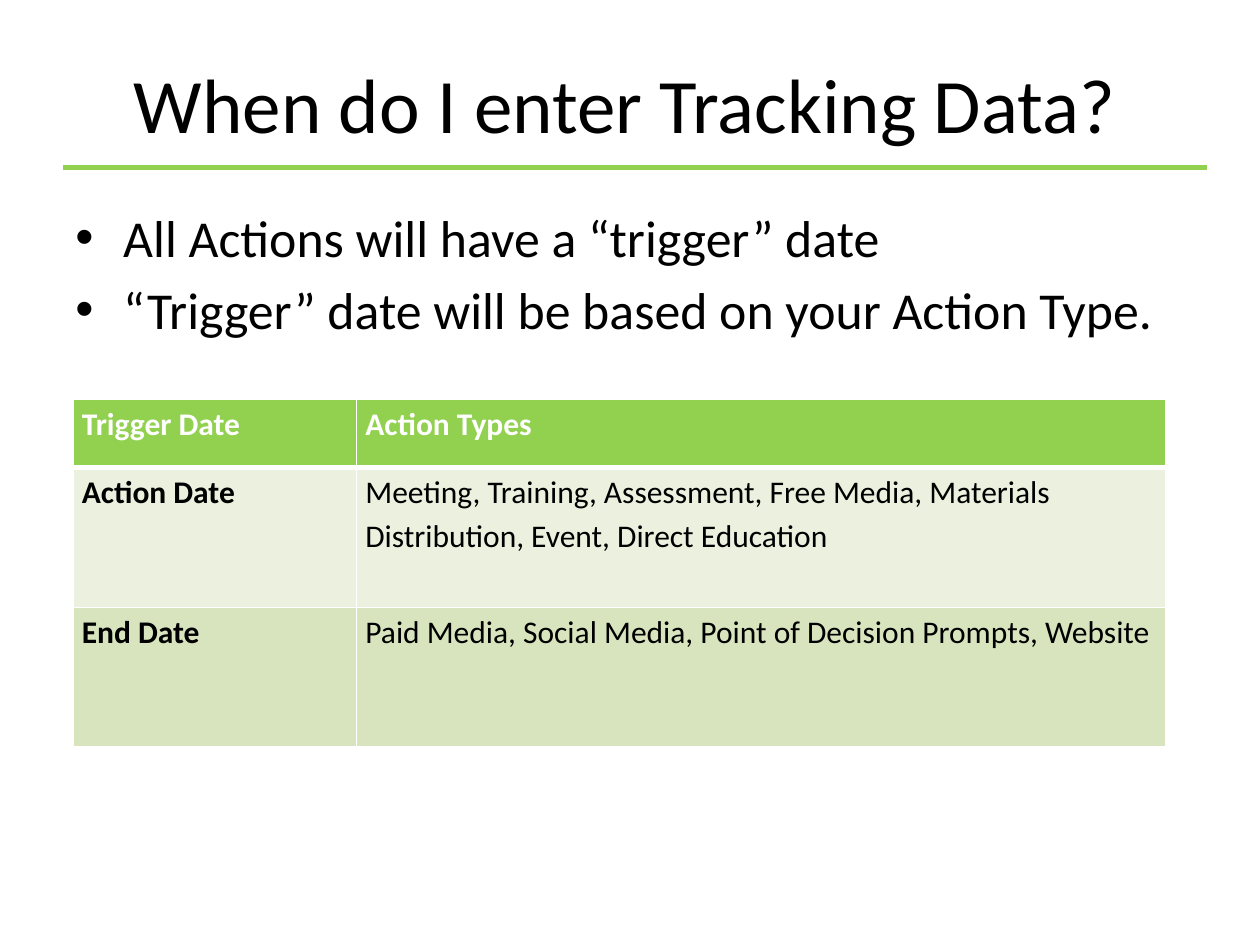
from lxml import etree
from pptx import Presentation
from pptx.dml.color import RGBColor
from pptx.enum.shapes import MSO_CONNECTOR
from pptx.enum.text import MSO_ANCHOR, PP_ALIGN
from pptx.oxml import parse_xml
from pptx.oxml.ns import nsdecls, qn
from pptx.util import Inches, Pt

# Content
TITLE = "When do I enter Tracking Data?"
BULLETS = [
    "All Actions will have a “trigger” date",
    "“Trigger” date will be based on your Action Type.",
]
ROWS = [
    ("Trigger Date", "Action Types"),
    ("Action Date", "Meeting, Training, Assessment, Free Media, Materials "
                    "Distribution, Event, Direct Education"),
    ("End Date", "Paid Media, Social Media, Point of Decision Prompts, Website"),
]

# Style
FONT = "Calibri"
BLACK = RGBColor(0x00, 0x00, 0x00)
WHITE = RGBColor(0xFF, 0xFF, 0xFF)
GREEN = RGBColor(0x92, 0xD0, 0x50)
ROW_FILLS = [GREEN, RGBColor(0xEB, 0xF1, 0xDE), RGBColor(0xD7, 0xE4, 0xBD)]
COLUMN_WIDTHS = [2.25, 6.42]
ROW_HEIGHTS = [0.54, 1.11, 1.11]


def set_font(para, size, color=BLACK, bold=False):
    font = para.font
    font.name, font.size, font.bold = FONT, Pt(size), bold
    font.color.rgb = color


def add_box(page, left, top, width, height):
    box = page.shapes.add_textbox(*map(Inches, (left, top, width, height)))
    box.text_frame.word_wrap = True
    return box.text_frame


def add_bullet(para):
    properties = para._p.get_or_add_pPr()
    properties.set("marL", str(Inches(0.38)))
    properties.set("indent", str(Inches(-0.38)))
    properties.append(parse_xml(f'<a:buFont {nsdecls("a")} typeface="Arial"/>'))
    properties.append(parse_xml(f'<a:buChar {nsdecls("a")} char="•"/>'))


def add_borders(cell, bottom_width):
    properties = cell._tc.get_or_add_tcPr()
    for side, width in (("L", 1), ("R", 1), ("T", 1), ("B", bottom_width)):
        properties.append(parse_xml(
            f'<a:ln{side} {nsdecls("a")} w="{Pt(width)}"><a:solidFill>'
            f'<a:srgbClr val="{WHITE}"/></a:solidFill></a:ln{side}>'))


deck = Presentation()
deck.slide_width, deck.slide_height = Inches(10), Inches(7.5)
page = deck.slides.add_slide(deck.slide_layouts[6])

# Rule under the title
rule = page.shapes.add_connector(
    MSO_CONNECTOR.STRAIGHT, Inches(0.5), Inches(1.33), Inches(9.58), Inches(1.33))
rule.line.color.rgb = GREEN
rule.line.width = Pt(3)
etree.SubElement(rule._element.spPr, qn("a:effectLst"))

# Title
title = add_box(page, 0.5, 0.3, 8.92, 1.03)
title.vertical_anchor = MSO_ANCHOR.MIDDLE
title.text = TITLE
title.paragraphs[0].alignment = PP_ALIGN.CENTER
set_font(title.paragraphs[0], 44)

# Bullets
body = add_box(page, 0.5, 1.58, 9, 1.4)
body.text = "\n".join(BULLETS)
for index, para in enumerate(body.paragraphs):
    if index:
        para.space_before = Pt(6)
    add_bullet(para)
    set_font(para, 29.6)

# Table of trigger dates
table = page.shapes.add_table(
    len(ROWS), len(COLUMN_WIDTHS), Inches(0.58), Inches(3.17),
    Inches(sum(COLUMN_WIDTHS)), Inches(sum(ROW_HEIGHTS))).table
for column, width in zip(table.columns, COLUMN_WIDTHS):
    column.width = Inches(width)
for row_index, (row, height) in enumerate(zip(table.rows, ROW_HEIGHTS)):
    row.height = Inches(height)
    header = row_index == 0
    for column_index, cell in enumerate(row.cells):
        cell.text = ROWS[row_index][column_index]
        cell.margin_left = cell.margin_right = Inches(0.07)
        cell.margin_top = cell.margin_bottom = 0
        add_borders(cell, 3 if header else 1)
        cell.fill.solid()
        cell.fill.fore_color.rgb = ROW_FILLS[row_index]
        para = cell.text_frame.paragraphs[0]
        para.line_spacing = 1.15
        set_font(para, 18, WHITE if header else BLACK,
                 bold=header or column_index == 0)

deck.save("out.pptx")
